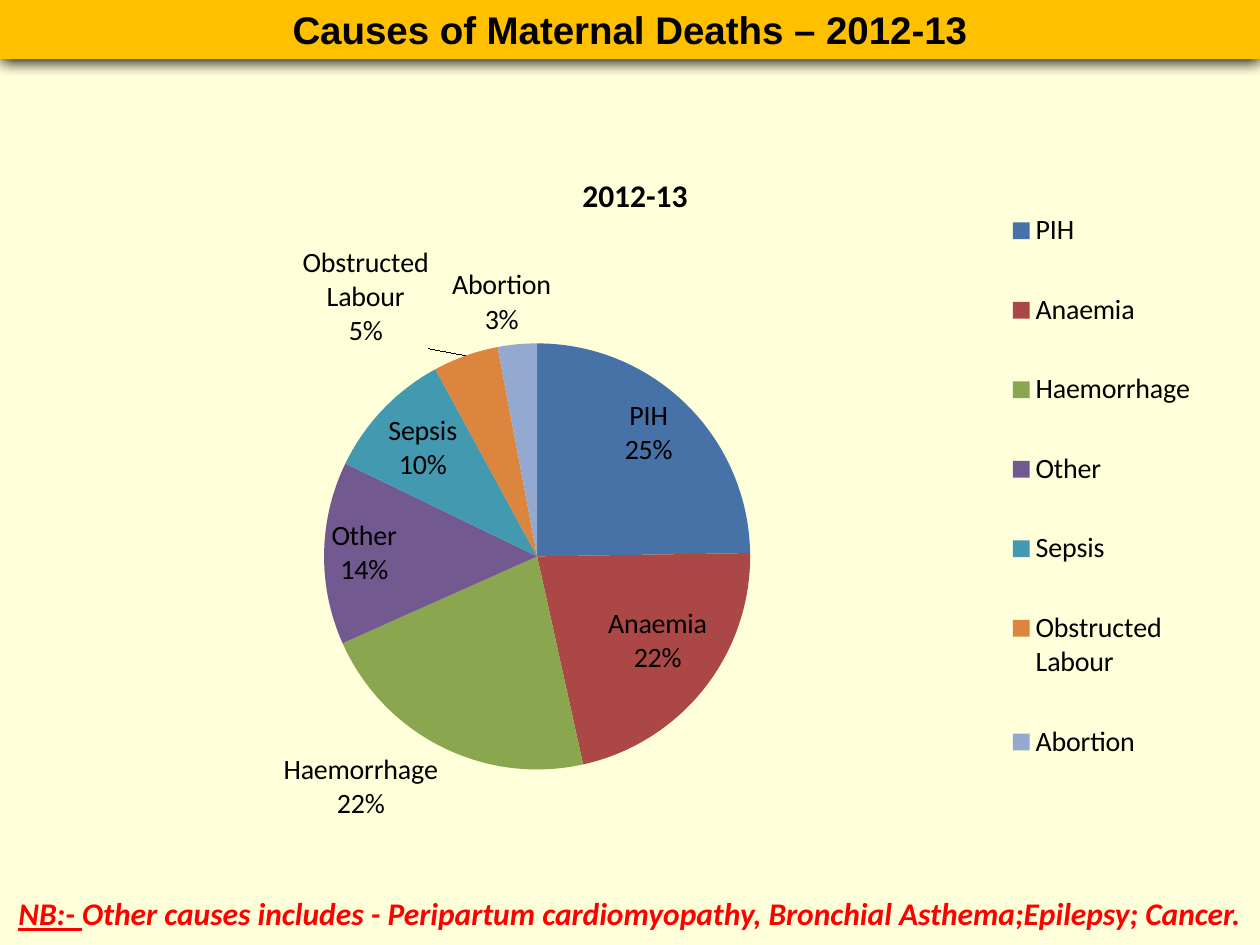
from copy import deepcopy
from dataclasses import dataclass

from lxml.etree import SubElement
from pptx import Presentation
from pptx.chart.data import CategoryChartData
from pptx.dml.color import RGBColor
from pptx.enum.chart import XL_CHART_TYPE, XL_LABEL_POSITION, XL_LEGEND_POSITION
from pptx.enum.text import MSO_ANCHOR, MSO_AUTO_SIZE, PP_ALIGN
from pptx.oxml import parse_xml
from pptx.oxml.ns import nsdecls, qn
from pptx.util import Inches, Pt


@dataclass
class Cause:
    name: str
    share: float
    color: str
    position: str = "inEnd"
    shift: tuple[float, float] | None = None
    stacked: bool = False


CAUSES = [
    Cause("PIH", 0.25, "4672A8", "bestFit"),
    Cause("Anaemia", 0.22, "AB4744", "bestFit"),
    Cause("Haemorrhage", 0.22, "8AA64F", "outEnd"),
    Cause("Other", 0.14, "725990"),
    Cause("Sepsis", 0.1, "4299B0"),
    Cause("Obstructed Labour", 0.05, "DC853E", "outEnd", (-0.03, 0), True),
    Cause("Abortion", 0.03, "93A9CF", "outEnd", (0.03, 0)),
]


def rgb(color: str) -> RGBColor:
    return RGBColor.from_string(color)


def style_font(font, size: float, color: str = "000000", bold: bool = False,
               name: str = "Calibri") -> None:
    font.size = Pt(size)
    font.name = name
    font.bold = bold
    font.color.rgb = rgb(color)


def place(sp, left: float, top: float, width: float, height: float) -> None:
    sp.left, sp.top = Inches(left), Inches(top)
    sp.width, sp.height = Inches(width), Inches(height)


def set_layout(parent, index: int, **values) -> None:
    for old in parent.findall(qn("c:layout")):
        parent.remove(old)
    layout = parent.makeelement(qn("c:layout"))
    manual = SubElement(layout, qn("c:manualLayout"))
    for tag, value in values.items():
        SubElement(manual, qn(f"c:{tag}")).set("val", str(value))
    parent.insert(index, layout)


def add_heading(s, text: str) -> None:
    sp = s.shapes.title
    place(sp, 0, 0, 10, 0.47)
    sp.fill.solid()
    sp.fill.fore_color.rgb = rgb("FFC000")
    sp._element.spPr.append(parse_xml(
        f'<a:effectLst {nsdecls("a")}>'
        f'<a:outerShdw blurRad="{Pt(8.5)}" dist="{Pt(1)}" dir="5400000" rotWithShape="0">'
        '<a:srgbClr val="000000"/></a:outerShdw></a:effectLst>'))
    tf = sp.text_frame
    tf.auto_size = MSO_AUTO_SIZE.NONE
    tf.vertical_anchor = MSO_ANCHOR.MIDDLE
    p = tf.paragraphs[0]
    p.alignment = PP_ALIGN.CENTER
    r = p.add_run()
    r.text = text
    style_font(r.font, 22, bold=True, name="Arial")


def add_note(s, label: str, text: str) -> None:
    sp = s.shapes.add_textbox(Inches(0), Inches(7.05), Inches(10), Inches(0.4))
    tf = sp.text_frame
    tf.word_wrap = True
    p = tf.paragraphs[0]
    p.alignment = PP_ALIGN.CENTER
    for part, underline in ((label, True), (text, False)):
        r = p.add_run()
        r.text = part
        style_font(r.font, 18, "FF0000", bold=True)
        r.font.italic = True
        r.font.underline = underline


def stack_label(tf, cause: Cause) -> None:
    for i, line in enumerate([*cause.name.split(), f"{cause.share:.0%}"]):
        p = tf.add_paragraph() if i else tf.paragraphs[0]
        r = p.add_run()
        r.text = line
        style_font(r.font, 16)


def label_slices(ser, causes: list[Cause]) -> None:
    labels = ser.data_labels
    style_font(labels.font, 16)
    labels.number_format = "0%"
    labels.number_format_is_linked = False
    labels.position = XL_LABEL_POSITION.INSIDE_END
    labels.show_value = True
    labels.show_category_name = True
    labels.show_percentage = False
    shared = labels._element
    separator = shared.makeelement(qn("c:separator"))
    separator.text = "\n"
    leader = shared.find(qn("c:showLeaderLines"))
    if leader is None:
        shared.append(separator)
    else:
        leader.addprevious(separator)
    parts = [part for part in shared if part is not leader]
    for i, cause in enumerate(causes):
        label = shared.makeelement(qn("c:dLbl"))
        SubElement(label, qn("c:idx")).set("val", str(i))
        label.extend([deepcopy(part) for part in parts])
        label.find(qn("c:dLblPos")).set("val", cause.position)
        if cause.shift:
            set_layout(label, 1, x=cause.shift[0], y=cause.shift[1])
        shared.insert(i, label)
        if cause.stacked:
            stack_label(ser.points[i].data_label.text_frame, cause)


def add_pie(s, title: str, causes: list[Cause]) -> None:
    data = CategoryChartData(number_format="0%")
    data.categories = [cause.name for cause in causes]
    data.add_series(title, [cause.share for cause in causes])
    chart = s.shapes.add_chart(XL_CHART_TYPE.PIE, Inches(0.47), Inches(1.17),
                               Inches(9.14), Inches(5.55), data).chart
    style_font(chart.font, 10)
    chart.has_title = True
    r = chart.chart_title.text_frame.paragraphs[0].add_run()
    r.text = title
    style_font(r.font, 18, bold=True)

    chart.has_legend = True
    legend = chart.legend
    legend.position = XL_LEGEND_POSITION.RIGHT
    legend.include_in_layout = False
    style_font(legend.font, 16)
    set_layout(legend._element, 1, xMode="edge", yMode="edge",
               x=0.82, y=0.03, w=0.17, h=0.91)

    plot = chart.plots[0]
    plot.vary_by_categories = True
    set_layout(plot._element.getparent(), 0, layoutTarget="inner",
               xMode="edge", yMode="edge", x=0.23, y=0.28, w=0.37, h=0.61)
    ser = plot.series[0]
    for i, cause in enumerate(causes):
        fill = ser.points[i].format.fill
        fill.solid()
        fill.fore_color.rgb = rgb(cause.color)
    label_slices(ser, causes)


def main() -> None:
    prs = Presentation()
    prs.slide_width, prs.slide_height = Inches(10), Inches(7.5)
    s = prs.slides.add_slide(prs.slide_layouts[5])
    s.background.fill.solid()
    s.background.fill.fore_color.rgb = rgb("FFFFDA")
    add_heading(s, "Causes of Maternal Deaths – 2012-13")
    add_note(s, "NB:- ", "Other causes includes - Peripartum cardiomyopathy, "
                         "Bronchial Asthema;Epilepsy; Cancer.")
    add_pie(s, "2012-13", CAUSES)
    prs.save("out.pptx")


if __name__ == "__main__":
    main()
